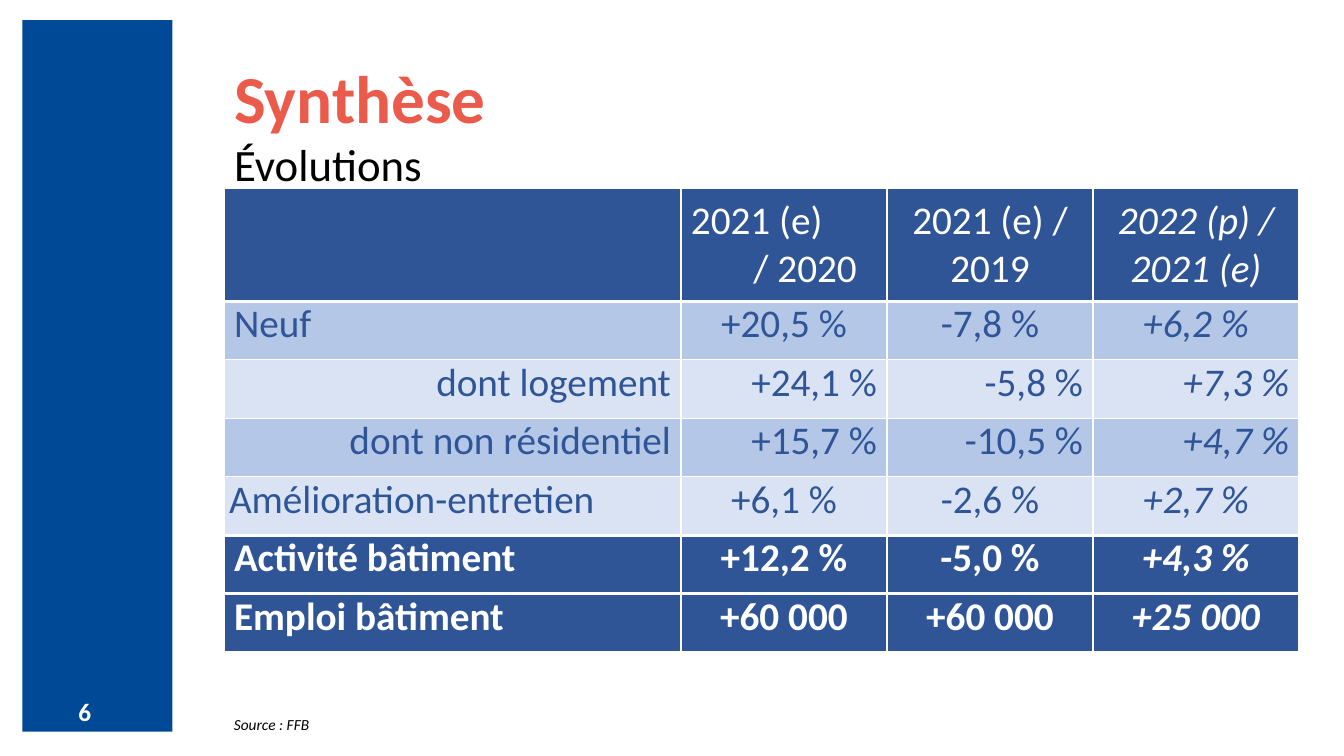
from dataclasses import dataclass

import pptx
import pptx.dml.color
import pptx.enum.shapes
import pptx.enum.text
import pptx.oxml
import pptx.oxml.ns
import pptx.util

RGBColor = pptx.dml.color.RGBColor
Align = pptx.enum.text.PP_ALIGN
Anchor = pptx.enum.text.MSO_ANCHOR

WHITE = RGBColor(0xFF, 0xFF, 0xFF)
BLACK = RGBColor(0x00, 0x00, 0x00)
CORAL = RGBColor(0xEB, 0x5B, 0x4C)
PANEL_BLUE = RGBColor(0x00, 0x49, 0x96)
DARK_BLUE = RGBColor(0x2F, 0x55, 0x97)
MID_BLUE = RGBColor(0xB4, 0xC7, 0xE7)
PALE_BLUE = RGBColor(0xDA, 0xE3, 0xF3)

SLIDE_WIDTH = pptx.util.Emu(12192000)
SLIDE_HEIGHT = pptx.util.Inches(7.5)
COLUMN = SLIDE_WIDTH / 120
ROW = SLIDE_HEIGHT / 75
CONTENT_LEFT = 20
CONTENT_WIDTH = 96
TABLE_COLUMNS = (40.8, 18.4, 18.4, 18.4)
HEADER_HEIGHT = 11.2
LINE_HEIGHT = 5.8


@dataclass(frozen=True)
class Area:
    left: float
    top: float
    width: float
    height: float

    def emu(self) -> tuple[int, int, int, int]:
        return (round(self.left * COLUMN), round(self.top * ROW),
                round(self.width * COLUMN), round(self.height * ROW))


@dataclass(frozen=True)
class Style:
    size: float
    color: RGBColor
    bold: bool = False
    italic: bool = False


@dataclass(frozen=True)
class Line:
    label: str
    values: tuple[str, str, str]
    fill: RGBColor
    detail: bool = False
    total: bool = False
    top: float = 1
    bottom: float = 1
    inset: float = 0.1


HEADERS = ("", "2021 (e)\n/ 2020", "2021 (e) / 2019", "2022 (p) / 2021 (e)")
LINES = (
    Line("Neuf", ("+20,5 %", "-7,8 %", "+6,2 %"), MID_BLUE),
    Line("dont logement", ("+24,1 %", "-5,8 %", "+7,3 %"), PALE_BLUE, detail=True),
    Line("dont non résidentiel", ("+15,7 %", "-10,5 %", "+4,7 %"), MID_BLUE, detail=True),
    Line("Amélioration-entretien", ("+6,1 %", "-2,6 %", "+2,7 %"), PALE_BLUE,
         bottom=2.25, inset=0.05),
    Line("Activité bâtiment", ("+12,2 %", "-5,0 %", "+4,3 %"), DARK_BLUE,
         total=True, top=2.25, bottom=2.25),
    Line("Emploi bâtiment", ("+60 000", "+60 000", "+25 000"), DARK_BLUE,
         total=True, top=2.25, bottom=2.25),
)


def write(paragraph, text: str, style: Style) -> None:
    for index, part in enumerate(text.split("\n")):
        if index:
            paragraph.add_line_break()
        run = paragraph.add_run()
        run.text = part
        run.font.name = "Calibri"
        run.font.size = pptx.util.Pt(style.size)
        run.font.bold = style.bold
        run.font.italic = style.italic
        run.font.color.rgb = style.color


def indent(paragraph, left: float, first: float) -> None:
    properties = paragraph._p.get_or_add_pPr()
    properties.set("marL", str(pptx.util.Inches(left)))
    properties.set("indent", str(pptx.util.Inches(first)))


def place_text(shape, area: Area, text: str, style: Style, spacing: float = 0.9) -> None:
    shape.left, shape.top, shape.width, shape.height = area.emu()
    frame = shape.text_frame
    frame.word_wrap = True
    frame.auto_size = pptx.enum.text.MSO_AUTO_SIZE.NONE
    frame.vertical_anchor = Anchor.TOP
    paragraph = frame.paragraphs[0]
    indent(paragraph, 0, 0)
    paragraph.alignment = Align.LEFT
    paragraph.line_spacing = spacing
    paragraph.space_before = pptx.util.Pt(0)
    paragraph._p.get_or_add_pPr().append(
        pptx.oxml.parse_xml(f'<a:buNone {pptx.oxml.ns.nsdecls("a")}/>'))
    write(paragraph, text, style)


def paint_cell(cell, fill: RGBColor, top: float, bottom: float) -> None:
    properties = cell._tc.get_or_add_tcPr()
    for side, width in (("L", 1), ("R", 1), ("T", top), ("B", bottom)):
        properties.append(pptx.oxml.parse_xml(
            f'<a:ln{side} {pptx.oxml.ns.nsdecls("a")} w="{pptx.util.Pt(width)}">'
            f'<a:solidFill><a:srgbClr val="{WHITE}"/></a:solidFill></a:ln{side}>'))
    cell.fill.solid()
    cell.fill.fore_color.rgb = fill
    cell.vertical_anchor = Anchor.MIDDLE


def fill_header(cells) -> None:
    for index, (cell, text) in enumerate(zip(cells, HEADERS)):
        paint_cell(cell, DARK_BLUE, 1, 3)
        paragraph = cell.text_frame.paragraphs[0]
        paragraph.alignment = Align.CENTER
        if "\n" in text:
            paragraph.alignment = Align.LEFT
            indent(paragraph, 0.62, -0.62)
        if text:
            write(paragraph, text, Style(28, WHITE, italic=index == 3))


def fill_line(cells, line: Line) -> None:
    color = WHITE if line.total else DARK_BLUE
    for index, (cell, text) in enumerate(zip(cells, (line.label, *line.values))):
        paint_cell(cell, line.fill, line.top, line.bottom)
        paragraph = cell.text_frame.paragraphs[0]
        if line.detail:
            paragraph.alignment = Align.RIGHT
        else:
            paragraph.alignment = Align.CENTER if index else Align.LEFT
        paragraph.line_spacing = 0.5
        write(paragraph, text, Style(28, color, line.total, index == 3))
    cells[0].margin_left = cells[0].margin_right = pptx.util.Inches(line.inset)


def add_evolutions(slide) -> None:
    height = HEADER_HEIGHT + LINE_HEIGHT * len(LINES)
    area = Area(CONTENT_LEFT, 18.7, CONTENT_WIDTH, height)
    evolutions = slide.shapes.add_table(
        len(LINES) + 1, len(TABLE_COLUMNS), *area.emu()).table
    evolutions.horz_banding = False
    for column, width in zip(evolutions.columns, TABLE_COLUMNS):
        column.width = round(width * COLUMN)
    header, *body = evolutions.rows
    header.height = round(HEADER_HEIGHT * ROW)
    fill_header(header.cells)
    for row, line in zip(body, LINES):
        row.height = round(LINE_HEIGHT * ROW)
        fill_line(row.cells, line)


def main() -> None:
    deck = pptx.Presentation()
    deck.slide_width, deck.slide_height = SLIDE_WIDTH, SLIDE_HEIGHT
    slide = deck.slides.add_slide(deck.slide_layouts[1])
    side_panel = slide.shapes.add_shape(
        pptx.enum.shapes.MSO_SHAPE.RECTANGLE, *Area(2, 2, 13.4, 70.6).emu())
    side_panel.shadow.inherit = False
    side_panel.fill.solid()
    side_panel.fill.fore_color.rgb = PANEL_BLUE
    side_panel.line.fill.background()

    page_area = Area(6.1, 68.6, 5, 4)
    source_area = Area(CONTENT_LEFT, 70.7, 35, 2.4)
    page_number = slide.shapes.add_textbox(*page_area.emu())
    place_text(page_number, page_area, "6", Style(18, WHITE, bold=True), 1.0)
    place_text(slide.shapes.title, Area(CONTENT_LEFT, 6, CONTENT_WIDTH, 8.3),
               "Synthèse", Style(48, CORAL, bold=True))
    place_text(slide.placeholders[1], Area(CONTENT_LEFT, 13.7, CONTENT_WIDTH, 5),
               "Évolutions", Style(32, BLACK))
    source = slide.shapes.add_textbox(*source_area.emu())
    place_text(source, source_area, "Source : FFB", Style(11, BLACK, italic=True))
    add_evolutions(slide)
    deck.save("out.pptx")


if __name__ == "__main__":
    main()
